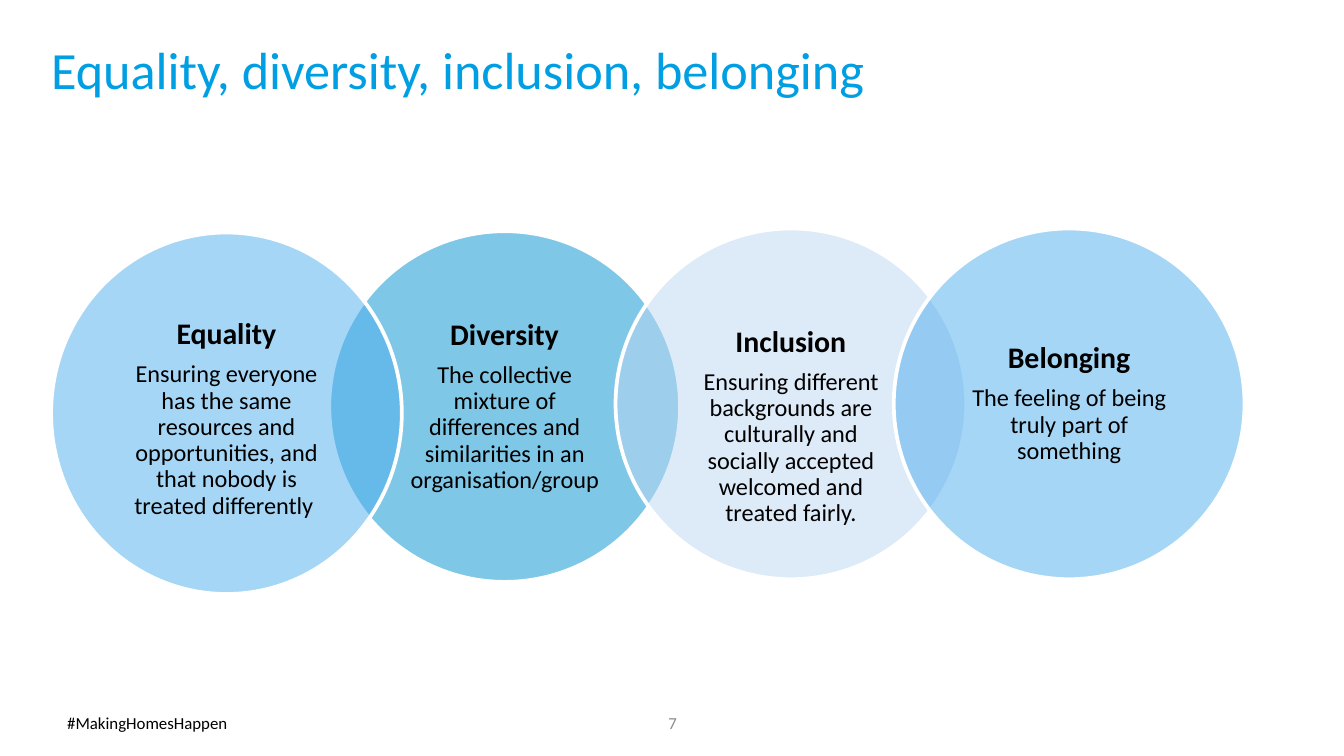
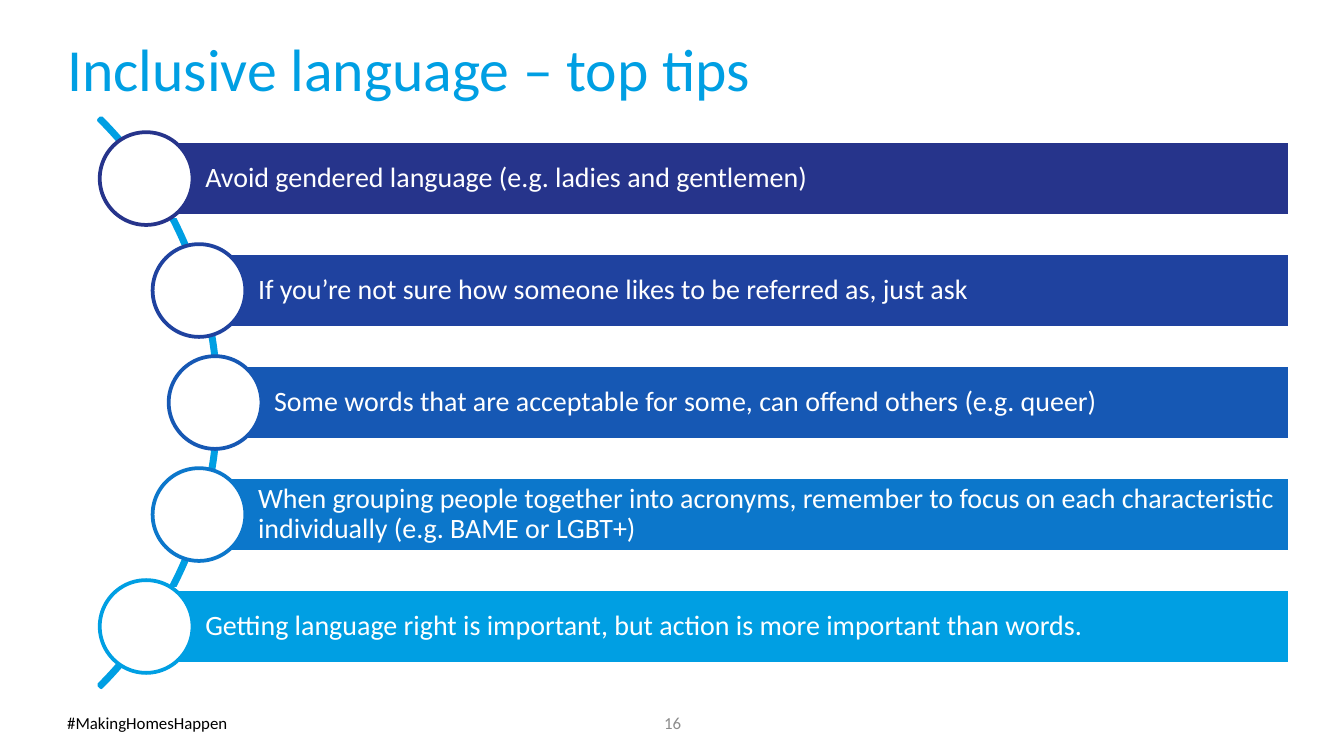
from math import sqrt

from lxml import etree
from pptx import Presentation
from pptx import util as u
from pptx.dml.color import RGBColor
from pptx.enum import shapes, text
from pptx.oxml import ns

FONT = "Calibri"
BLUE, WHITE, BLACK, GREY = "009FE3", "FFFFFF", "000000", "8C8C8C"
TITLE_ONLY = 5


def colour(value):
    return RGBColor.from_string(value)


# Shared helpers
def set_frame(shape, margins=(0, 0, 0, 0), anchor=text.MSO_ANCHOR.MIDDLE):
    frame = shape.text_frame
    frame.word_wrap = True
    frame.auto_size = text.MSO_AUTO_SIZE.NONE
    frame.vertical_anchor = anchor
    frame.margin_left, frame.margin_top, frame.margin_right, frame.margin_bottom = (
        u.Inches(margin) for margin in margins)
    return frame


def write(paragraph, words, size, ink=BLACK, bold=False,
          align=text.PP_ALIGN.LEFT, spacing=1.0, after=0):
    paragraph.alignment = align
    paragraph.line_spacing = spacing
    paragraph.space_before = u.Pt(0)
    paragraph.space_after = u.Pt(after)
    run = paragraph.add_run()
    run.text = words
    run.font.name = FONT
    run.font.size = u.Pt(size)
    run.font.bold = bold
    run.font.color.rgb = colour(ink)


def add_shape(slide, kind, box, line, fill, alpha=None):
    shape = slide.shapes.add_shape(kind, *map(u.Inches, box))
    shape.shadow.inherit = False
    shape.line.color.rgb = colour(line)
    shape.line.width = u.Pt(2)
    shape.fill.solid()
    shape.fill.fore_color.rgb = colour(fill)
    if alpha is not None:
        fill_colour = shape.fill._xPr.find(".//" + ns.qn("a:srgbClr"))
        etree.SubElement(fill_colour, ns.qn("a:alpha"), val=str(alpha * 1000))
    return shape


def add_label(slide, words, box, **style):
    label = slide.shapes.add_textbox(*map(u.Inches, box))
    write(set_frame(label).paragraphs[0], words, 9, **style)


def new_slide(presentation, title, title_box, title_size, number):
    slide = presentation.slides.add_slide(presentation.slide_layouts[TITLE_ONLY])
    holder = slide.shapes.title
    holder.left, holder.top, holder.width, holder.height = map(u.Inches, title_box)
    frame = set_frame(holder, anchor=text.MSO_ANCHOR.TOP)
    write(frame.paragraphs[0], title, title_size, ink=BLUE, spacing=0.9, after=6)
    add_label(slide, "#MakingHomesHappen", (0.5, 5.3, 3.17, 0.15))
    add_label(slide, number, (4.63, 5.3, 0.75, 0.15), ink=GREY,
              align=text.PP_ALIGN.CENTER)
    return slide


# Overlapping circles
def add_concept(slide, box, fill, heading, body, drop):
    """Draw a see-through circle; drop is extra top margin for its text."""
    circle = add_shape(slide, shapes.MSO_SHAPE.OVAL, box, WHITE, fill, alpha=50)
    frame = set_frame(circle, (0.14, 0.02 + drop, 0.14, 0.02))
    style = {"align": text.PP_ALIGN.CENTER, "spacing": 0.9}
    write(frame.paragraphs[0], heading, 16, bold=True, after=5.6, **style)
    write(frame.add_paragraph(), body, 13, after=4.5, **style)


def build_concepts(presentation):
    slide = new_slide(presentation, "Equality, diversity, inclusion, belonging",
                      (0.38, 0.33, 9.36, 1.24), 28, "7")
    size = 2.61
    # Back to front: left, top, height, fill, heading, body, text drop
    concepts = [
        (2.45, 1.72, size, "0090CE", "Diversity",
         "The collective mixture of differences and similarities in an "
         "organisation/group", 0),
        (0.38, 1.73, 2.69, "4FAEEF", "Equality",
         "Ensuring everyone has the same resources and opportunities, and that "
         "nobody is treated differently ", 0.09),
        (4.58, 1.7, size, "BCD6F2", "Inclusion",
         "Ensuring different backgrounds are culturally and socially accepted "
         "welcomed and treated fairly.", 0.34),
        (6.65, 1.7, size, "4FAEEF", "Belonging",
         "The feeling of being truly part of something", 0),
    ]
    for left, top, height, *details in concepts:
        add_concept(slide, (left, top, size, height), *details)


# Tips along an arc
def add_tip(slide, x, y, right, fill, words):
    """Draw a bar from x to right, and its circle centred on (x, y)."""
    height, diameter = 0.56, 0.69
    bar = add_shape(slide, shapes.MSO_SHAPE.RECTANGLE,
                    (x, y - height / 2, right - x, height), WHITE, fill)
    frame = set_frame(bar, (0.44, 0.04, 0.04, 0.04))
    write(frame.paragraphs[0], words, 15, ink=WHITE, spacing=0.9, after=5.25)
    add_shape(slide, shapes.MSO_SHAPE.OVAL,
              (x - diameter / 2, y - diameter / 2, diameter, diameter), fill, WHITE)


def build_tips(presentation):
    slide = new_slide(presentation, "Inclusive language – top tips",
                      (0.5, 0.3, 9, 0.69), 32, "16")
    arc_left, arc_size = -4.36, 5.99
    arc = add_shape(slide, shapes.MSO_SHAPE.BLOCK_ARC,
                    (arc_left, 0, arc_size, arc_size), BLUE, BLUE)
    for index, value in enumerate((189, 27, 0.004)):
        arc.adjustments[index] = value

    tips = [
        ("26348B", "Avoid gendered language (e.g. ladies and gentlemen)"),
        ("1F429F", "If you’re not sure how someone likes to be referred as, just ask"),
        ("1658B4", "Some words that are acceptable for some, can offend others "
                   "(e.g. queer)"),
        ("0C77CB", "When grouping people together into acronyms, remember to focus "
                   "on each characteristic individually (e.g. BAME or LGBT+)"),
        (BLUE, "Getting language right is important, but action is more important "
               "than words."),
    ]
    # Circle centres lie just inside the arc, at equal vertical steps
    centre, radius, step = arc_size / 2, arc_size / 2 - 0.03, 2.5 / 3
    for index, (fill, words) in enumerate(tips):
        offset = (index - len(tips) // 2) * step
        x = arc_left + centre + sqrt(radius ** 2 - offset ** 2)
        add_tip(slide, x, centre + offset, 9.6, fill, words)


def main():
    presentation = Presentation()
    # Widescreen, 16:9
    presentation.slide_width = u.Inches(10)
    presentation.slide_height = u.Inches(10 * 9 / 16)
    build_concepts(presentation)
    build_tips(presentation)
    presentation.save("out.pptx")


if __name__ == "__main__":
    main()
